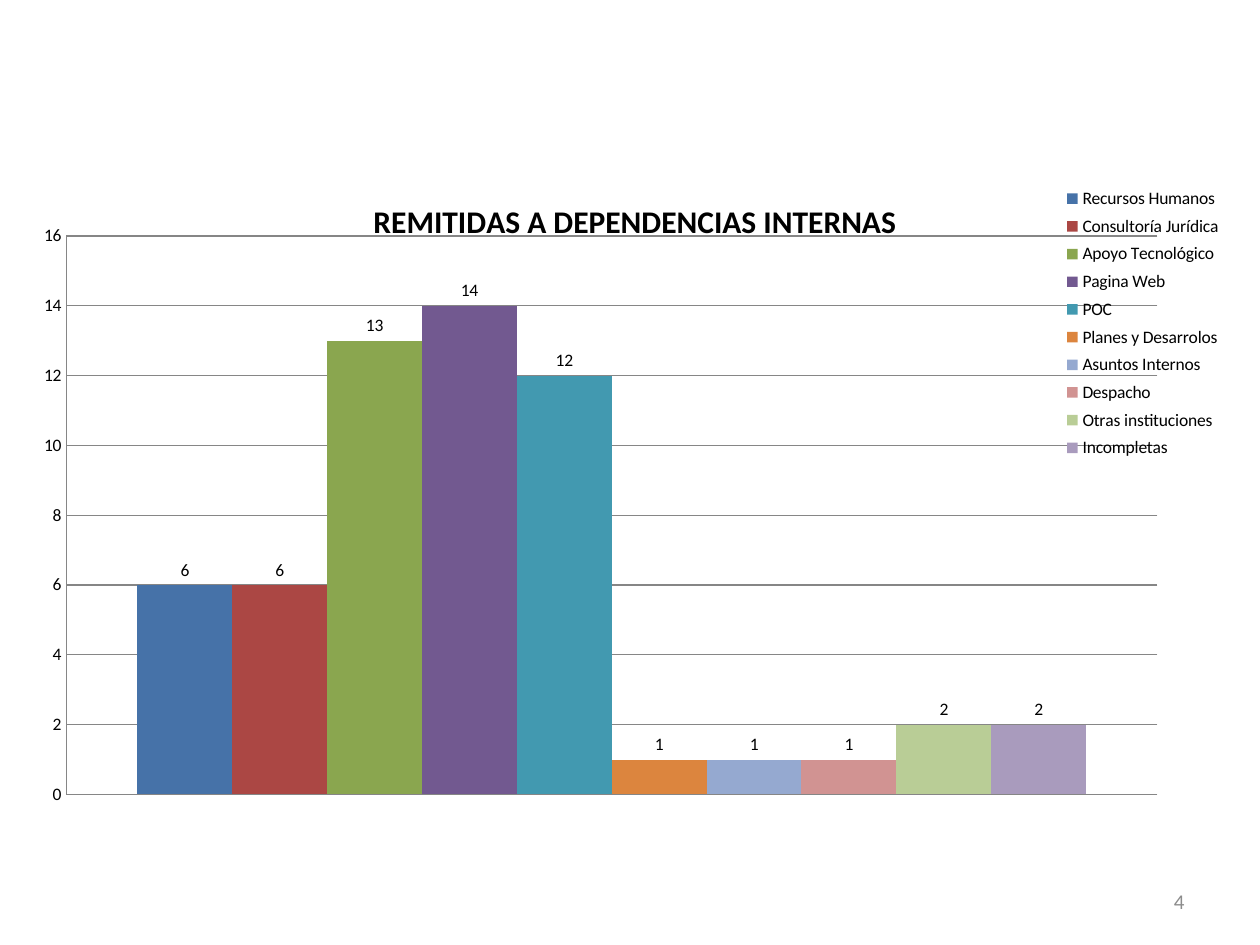
import pptx
import pptx.chart.data
import pptx.dml.color
import pptx.enum.chart
import pptx.enum.text
import pptx.oxml
import pptx.oxml.ns
import pptx.util

Cm = pptx.util.Cm
Pt = pptx.util.Pt
RGBColor = pptx.dml.color.RGBColor
qn = pptx.oxml.ns.qn

FONT = "Calibri"
BLACK = RGBColor(0x00, 0x00, 0x00)
GRID = RGBColor(0x86, 0x86, 0x86)
NUMBER_GRAY = RGBColor(0x8C, 0x8C, 0x8C)

REFERRALS = [
    ("Recursos Humanos", 6, RGBColor(0x46, 0x72, 0xA8)),
    ("Consultoría Jurídica", 6, RGBColor(0xAB, 0x47, 0x44)),
    ("Apoyo Tecnológico", 13, RGBColor(0x8A, 0xA6, 0x4F)),
    ("Pagina Web", 14, RGBColor(0x72, 0x59, 0x90)),
    ("POC", 12, RGBColor(0x42, 0x99, 0xB0)),
    ("Planes y Desarrolos", 1, RGBColor(0xDC, 0x85, 0x3E)),
    ("Asuntos Internos", 1, RGBColor(0x95, 0xA9, 0xD0)),
    ("Despacho", 1, RGBColor(0xD1, 0x93, 0x92)),
    ("Otras instituciones", 2, RGBColor(0xB9, 0xCD, 0x96)),
    ("Incompletas", 2, RGBColor(0xA9, 0x9B, 0xBD)),
]


def set_font(font, size, color, bold=False):
    font.name = FONT
    font.size = Pt(size)
    font.bold = bold
    font.color.rgb = color


def set_layout(element, before, **values):
    """Place a chart part by fractions of the chart, ahead of the child tag `before`."""
    for old in element.findall(qn("c:layout")):
        element.remove(old)
    items = "".join(f'<c:{tag} val="{val}"/>' for tag, val in values.items())
    layout = pptx.oxml.parse_xml(
        f'<c:layout {pptx.oxml.ns.nsdecls("c")}>'
        f"<c:manualLayout>{items}</c:manualLayout></c:layout>"
    )
    follower = element.find(qn(before))
    if follower is None:
        element.append(layout)
    else:
        follower.addprevious(layout)


def style_title(chart):
    chart.has_title = True
    tf = chart.chart_title.text_frame
    tf.text = "REMITIDAS A DEPENDENCIAS INTERNAS"
    set_font(tf.paragraphs[0].runs[0].font, 18, BLACK, bold=True)
    set_layout(chart.chart_title._element, "c:overlay",
               xMode="edge", yMode="edge", x=0.28, y=0.04)


def style_legend(chart):
    chart.has_legend = True
    legend = chart.legend
    legend.position = pptx.enum.chart.XL_LEGEND_POSITION.RIGHT
    legend.include_in_layout = False
    set_font(legend.font, 10, BLACK)
    set_layout(legend._element, "c:overlay",
               xMode="edge", yMode="edge", x=0.84, y=0.02, w=0.16, h=0.43)


def style_axes(chart):
    chart.category_axis.visible = False
    axis = chart.value_axis
    axis.minimum_scale, axis.maximum_scale, axis.major_unit = 0, 16, 2
    axis.major_tick_mark = pptx.enum.chart.XL_TICK_MARK.NONE
    axis.has_major_gridlines = True
    for line in (axis.format.line, axis.major_gridlines.format.line):
        line.color.rgb = GRID
        line.width = Pt(0.75)


def style_columns(plot):
    plot.gap_width = 150
    plot.overlap = 0
    plot.vary_by_categories = False
    for series, (_, _, color) in zip(plot.series, REFERRALS):
        series.format.fill.solid()
        series.format.fill.fore_color.rgb = color
        series.invert_if_negative = False
        labels = series.data_labels
        labels.show_value = True
        labels.position = pptx.enum.chart.XL_LABEL_POSITION.OUTSIDE_END
        set_font(labels.font, 10, BLACK)


def add_referrals_chart(s, left, top, width, height):
    data = pptx.chart.data.CategoryChartData()
    data.categories = ["1"]
    for name, value, _ in REFERRALS:
        data.add_series(name, [value])
    chart = s.shapes.add_chart(
        pptx.enum.chart.XL_CHART_TYPE.COLUMN_CLUSTERED,
        left, top, width, height, data,
    ).chart
    set_font(chart.font, 10, BLACK)
    style_title(chart)
    style_legend(chart)
    style_axes(chart)
    style_columns(chart.plots[0])
    set_layout(chart._chartSpace.find(f".//{qn('c:plotArea')}"), "c:barChart",
               layoutTarget="inner", xMode="edge", yMode="edge",
               x=0.031, y=0.103, w=0.901, h=0.843)


def add_slide_number(s, left, top, width, height):
    tf = s.shapes.add_textbox(left, top, width, height).text_frame
    tf.word_wrap = True
    tf.vertical_anchor = pptx.enum.text.MSO_ANCHOR.MIDDLE
    tf.text = "4"
    p = tf.paragraphs[0]
    p.alignment = pptx.enum.text.PP_ALIGN.RIGHT
    set_font(p.runs[0].font, 12, NUMBER_GRAY)


def main():
    prs = pptx.Presentation()
    prs.slide_width, prs.slide_height = Cm(25.4), Cm(19.05)
    s = prs.slides.add_slide(prs.slide_layouts[6])
    add_slide_number(s, Cm(18.2), Cm(17.66), Cm(5.93), Cm(1.01))
    add_referrals_chart(s, Cm(0.58), Cm(3.38), Cm(24.41), Cm(13.36))
    prs.save("out.pptx")


if __name__ == "__main__":
    main()
